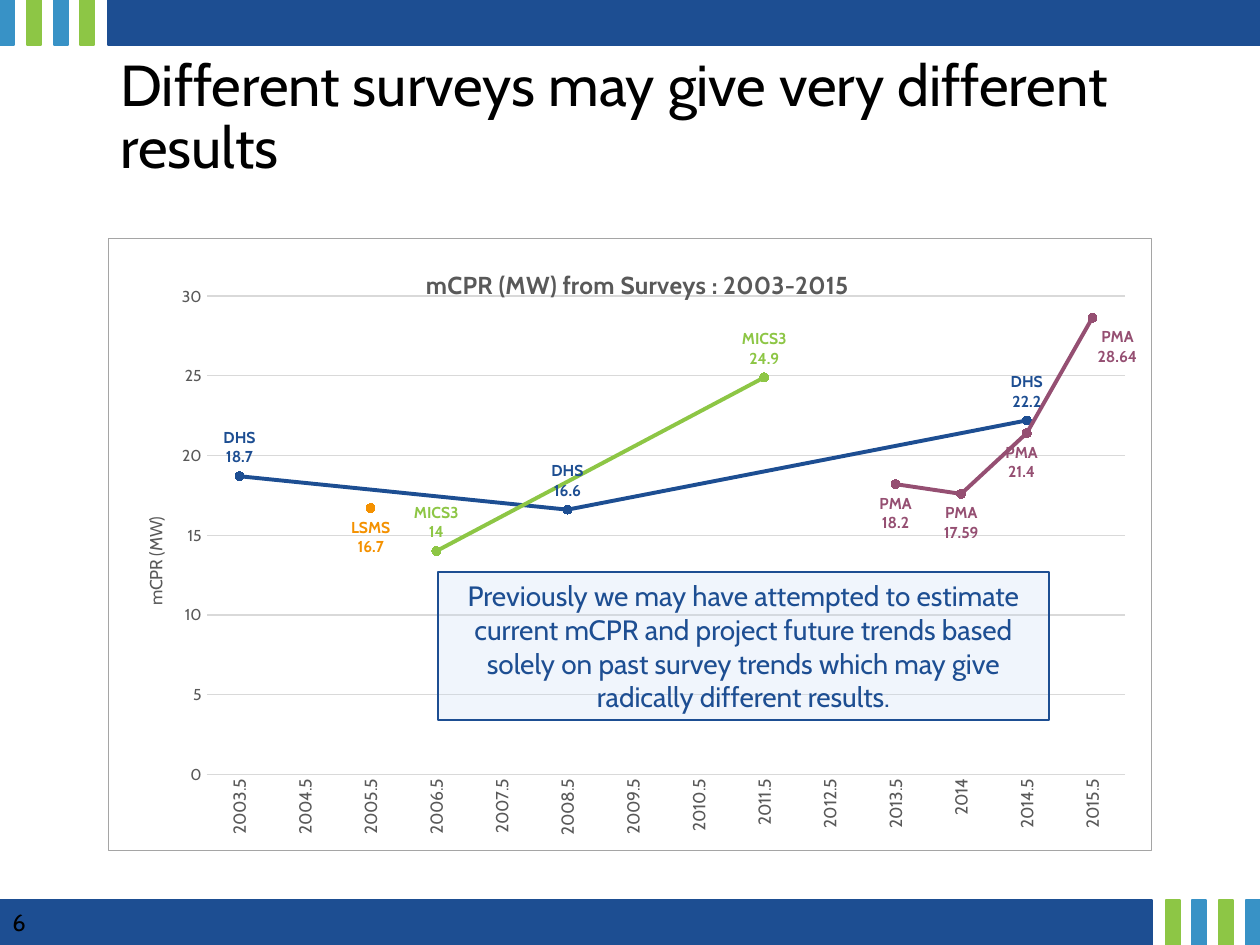
from lxml.etree import SubElement
from pptx import Presentation
from pptx.chart.data import CategoryChartData
from pptx.dml.color import RGBColor
from pptx.enum.chart import (XL_CHART_TYPE, XL_LABEL_POSITION, XL_MARKER_STYLE,
                             XL_TICK_MARK)
from pptx.enum.shapes import MSO_SHAPE
from pptx.enum.text import MSO_ANCHOR, PP_ALIGN
from pptx.oxml import parse_xml
from pptx.oxml.ns import nsdecls, qn
from pptx.util import Pt

EMU_PER_PX = 914400 / 126
W, H = 1260, 945
FONT = "Cabin"
COLORS = {
    "navy": "1D4E92", "blue": "3892C6", "green": "8DC645", "orange": "F49100",
    "plum": "954F72", "pale": "C7DAF4", "black": "000000", "grey": "595959",
    "grid": "D9D9D9", "border": "A5A5A5",
}
YEARS = ["2003.5", "2004.5", "2005.5", "2006.5", "2007.5", "2008.5", "2009.5",
         "2010.5", "2011.5", "2012.5", "2013.5", "2014", "2014.5", "2015.5"]
ABOVE, BELOW = XL_LABEL_POSITION.ABOVE, XL_LABEL_POSITION.BELOW
SURVEYS = [  # name, colour, label position, {year: mCPR}
    ("DHS", "navy", ABOVE, {"2003.5": 18.7, "2008.5": 16.6, "2014.5": 22.2}),
    ("LSMS", "orange", BELOW, {"2005.5": 16.7}),
    ("MICS3", "green", ABOVE, {"2006.5": 14, "2011.5": 24.9}),
    ("PMA", "plum", BELOW,
     {"2013.5": 18.2, "2014": 17.59, "2014.5": 21.4, "2015.5": 28.64}),
]
LABEL_SHIFTS = {"PMA": {"2014.5": -0.005, "2015.5": 0.024}}


def px(n):
    return round(n * EMU_PER_PX)


def rgb(name):
    return RGBColor.from_string(COLORS[name])


def set_layout(el, index, **values):
    """Give a chart element a manual layout, as its child number index."""
    for old in el.findall(qn("c:layout")):
        el.remove(old)
    parts = "".join(f'<c:{k} val="{v}"/>' for k, v in values.items())
    el.insert(index, parse_xml(
        f'<c:layout {nsdecls("c")}><c:manualLayout>{parts}'
        "</c:manualLayout></c:layout>"))


def show_name_and_value(labels):
    """Put the series name on a line above the value."""
    labels.find(qn("c:showSerName")).set("val", "1")
    labels.find(qn("c:showVal")).set("val", "1")
    separator = parse_xml(f'<c:separator {nsdecls("c")}>\n</c:separator>')
    labels.find(qn("c:showBubbleSize")).addnext(separator)


class Deck:
    def __init__(self):
        self.prs = Presentation()
        self.prs.slide_width, self.prs.slide_height = px(W), px(H)
        self.slide = self.prs.slides.add_slide(self.prs.slide_layouts[6])

    def font(self, font, size, color, bold=False):
        font.name, font.size, font.bold = FONT, Pt(size), bold
        font.color.rgb = rgb(color)

    def line(self, line, color, width):
        line.color.rgb, line.width = rgb(color), Pt(width)

    def rect(self, x, y, w, h, fill, line, width=1.0, opacity=100):
        sp = self.slide.shapes.add_shape(
            MSO_SHAPE.RECTANGLE, px(x), px(y), px(w), px(h))
        sp.shadow.inherit = False
        sp.fill.solid()
        sp.fill.fore_color.rgb = rgb(fill)
        if opacity < 100:
            clr = sp.fill._xPr.find(".//" + qn("a:srgbClr"))
            SubElement(clr, qn("a:alpha"), val=str(opacity * 1000))
        self.line(sp.line, line, width)
        return sp

    def fill_text(self, sp, text, size, color, anchor, align=PP_ALIGN.LEFT):
        tf = sp.text_frame
        tf.word_wrap, tf.vertical_anchor = True, anchor
        tf.text = text
        p = tf.paragraphs[0]
        p.alignment = align
        self.font(p.runs[0].font, size, color)
        return p

    def text(self, x, y, w, h, *style):
        sp = self.slide.shapes.add_textbox(px(x), px(y), px(w), px(h))
        return self.fill_text(sp, *style)

    def band(self, y, mirrored):
        """Navy band with four stripes at its left, or right when mirrored."""
        def place(x, w, color):
            self.rect(W - x - w if mirrored else x, y, w, 45, color, color)

        place(108, W - 108, "navy")
        for i in range(4):
            place(round(i * 26.8), 14, ("blue", "green")[i % 2])

    def chart_title(self, title, text, size, bold, x, y):
        title.text_frame.text = text
        self.font(title.text_frame.paragraphs[0].runs[0].font, size, "grey", bold)
        set_layout(title._element, 1, xMode="edge", yMode="edge", x=x, y=y)

    def axis(self, axis, size):
        axis.major_tick_mark = axis.minor_tick_mark = XL_TICK_MARK.NONE
        self.font(axis.tick_labels.font, size, "grey")

    def series(self, series, color, position):
        series.smooth = False
        self.line(series.format.line, color, 2.25)
        series.marker.style, series.marker.size = XL_MARKER_STYLE.CIRCLE, 5
        series.marker.format.fill.solid()
        series.marker.format.fill.fore_color.rgb = rgb(color)
        self.line(series.marker.format.line, color, 0.75)
        labels = series.data_labels
        self.font(labels.font, 9, color, True)
        labels.position = position
        show_name_and_value(labels._element)
        for year, shift in LABEL_SHIFTS.get(series.name, {}).items():
            label = series.points[YEARS.index(year)].data_label
            self.font(label.font, 9, color, True)
            label.position = position
            dlbl = labels._element.findall(qn("c:dLbl"))[-1]
            set_layout(dlbl, 1, x=shift, y=0)
            show_name_and_value(dlbl)

    def line_chart(self, x, y, w, h):
        data = CategoryChartData()
        data.categories = YEARS
        for name, _, _, values in SURVEYS:
            data.add_series(name, [values.get(year) for year in YEARS])
        chart = self.slide.shapes.add_chart(
            XL_CHART_TYPE.LINE_MARKERS, px(x), px(y), px(w), px(h), data).chart
        self.font(chart.font, 10, "black")
        chart.has_legend = False
        self.chart_title(chart.chart_title, "mCPR (MW) from Surveys : 2003-2015",
                         14, True, 0.3, 0.04)

        years, values = chart.category_axis, chart.value_axis
        self.axis(years, 10)
        self.line(years.format.line, "grid", 0.75)
        years._element.find(qn("c:txPr")).find(qn("a:bodyPr")).set("rot", "-5400000")
        self.axis(values, 9)
        values.minimum_scale, values.maximum_scale, values.major_unit = 0, 30, 5
        values.format.line.fill.background()
        self.line(values.major_gridlines.format.line, "grid", 0.75)
        self.chart_title(values.axis_title, "mCPR (MW)", 10, False, 0.03, 0.45)

        for series, (_, color, position, _) in zip(chart.plots[0].series, SURVEYS):
            self.series(series, color, position)

        root = chart._chartSpace
        set_layout(root.find(".//" + qn("c:plotArea")), 0, layoutTarget="inner",
                   xMode="edge", yMode="edge", x=0.094, y=0.094, w=0.881, h=0.782)
        root.find(".//" + qn("c:dispBlanksAs")).set("val", "span")
        root.find(qn("c:chart")).addnext(parse_xml(
            f'<c:spPr {nsdecls("c", "a")}><a:noFill/><a:ln w="9525"><a:solidFill>'
            f'<a:srgbClr val="{COLORS["border"]}"/></a:solidFill></a:ln></c:spPr>'))


def main():
    deck = Deck()
    deck.band(0, mirrored=False)
    deck.band(H - 45, mirrored=True)
    title = deck.text(108, 50, 1045, 159,
                      "Different surveys may give very different results",
                      33, "black", MSO_ANCHOR.TOP)
    title.line_spacing = 0.9
    deck.text(0, 900, 108, 45, "6", 13.5, "black", MSO_ANCHOR.MIDDLE)
    deck.line_chart(108, 238, 1044, 613)
    callout = deck.rect(438, 572, 611, 148, "pale", "navy", 0.75, opacity=25)
    deck.fill_text(callout,
                   "Previously we may have attempted to estimate current mCPR and "
                   "project future trends based solely on past survey trends which "
                   "may give radically different results.",
                   16, "navy", MSO_ANCHOR.MIDDLE, PP_ALIGN.CENTER)
    deck.prs.save("out.pptx")


if __name__ == "__main__":
    main()
